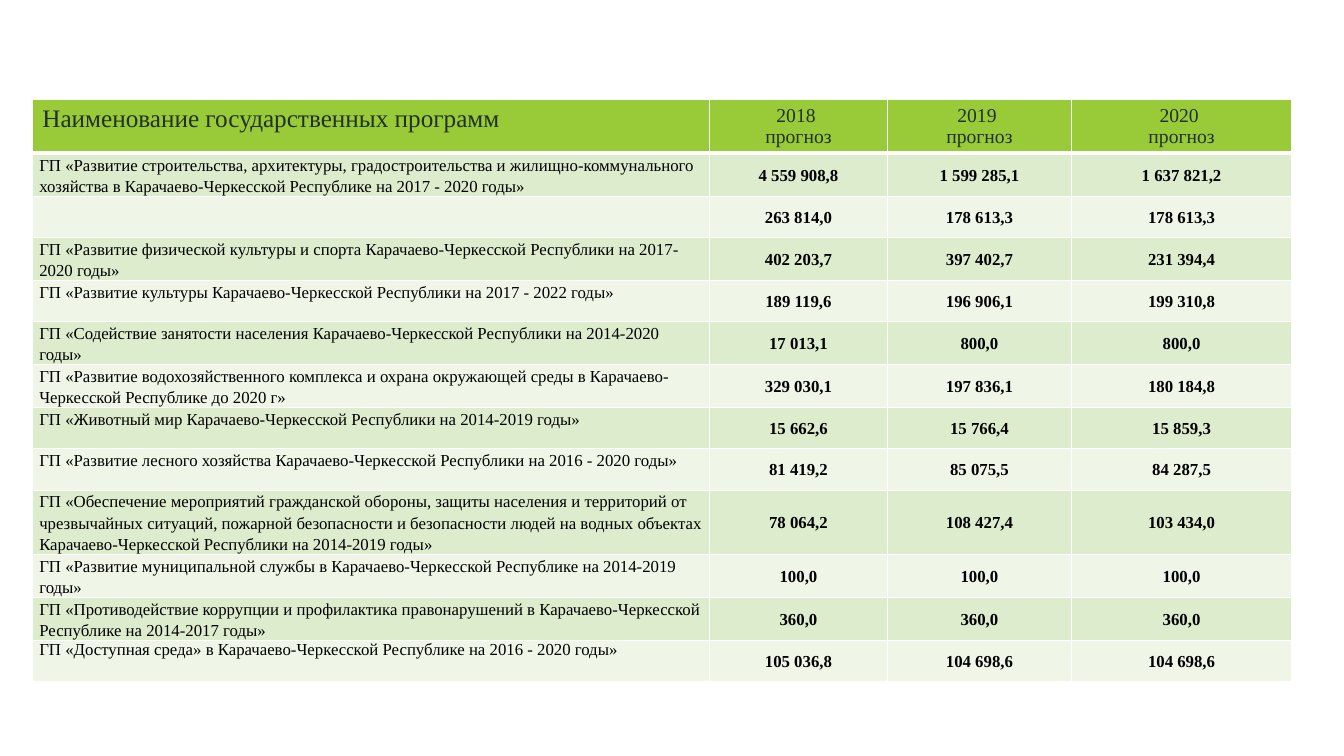
import pptx
import pptx.util
import pptx.dml.color
import pptx.enum.text
import pptx.oxml.ns
import lxml.etree

Inches, Pt = pptx.util.Inches, pptx.util.Pt
ALIGN = pptx.enum.text.PP_ALIGN
ANCHOR = pptx.enum.text.MSO_ANCHOR

FONT = "Times New Roman"
COLORS = {
    "header": "99CB38",
    "header_text": "223028",
    "odd_row": "DEECCE",
    "even_row": "EFF6E8",
    "text": "000000",
    "border": "FFFFFF",
}
PROGRAM_HEADING = "Наименование государственных программ"
YEARS = ["2018 ", "2019 ", "2020 "]
FORECAST = "прогноз"
PROGRAMS = [
    ("ГП «Развитие строительства, архитектуры, градостроительства и жилищно-коммунального хозяйства в Карачаево-Черкесской Республике на 2017 - 2020 годы»",
     "4 559 908,8", "1 599 285,1", "1 637 821,2"),
    ("", "263 814,0", "178 613,3", "178 613,3"),
    ("ГП «Развитие физической культуры и спорта Карачаево-Черкесской Республики на 2017-2020 годы»",
     "402 203,7", "397 402,7", "231 394,4"),
    ("ГП «Развитие культуры Карачаево-Черкесской Республики на 2017 - 2022 годы»",
     "189 119,6", "196 906,1", "199 310,8"),
    ("ГП «Содействие занятости населения Карачаево-Черкесской Республики на 2014-2020 годы»",
     "17 013,1", "800,0", "800,0"),
    ("ГП «Развитие водохозяйственного комплекса и охрана окружающей среды в Карачаево-Черкесской Республике до 2020 г»",
     "329 030,1", "197 836,1", "180 184,8"),
    ("ГП «Животный мир Карачаево-Черкесской Республики на 2014-2019 годы»",
     "15 662,6", "15 766,4", "15 859,3"),
    ("ГП «Развитие лесного хозяйства Карачаево-Черкесской Республики на 2016 - 2020 годы»",
     "81 419,2", "85 075,5", "84 287,5"),
    ("ГП «Обеспечение мероприятий гражданской обороны, защиты населения и территорий от чрезвычайных ситуаций, пожарной безопасности и безопасности людей на водных объектах Карачаево-Черкесской Республики на 2014-2019 годы»",
     "78 064,2", "108 427,4", "103 434,0"),
    ("ГП «Развитие муниципальной службы в Карачаево-Черкесской Республике на 2014-2019 годы»",
     "100,0", "100,0", "100,0"),
    ("ГП «Противодействие коррупции и профилактика правонарушений в Карачаево-Черкесской Республике на 2014-2017 годы»",
     "360,0", "360,0", "360,0"),
    ("ГП «Доступная среда» в Карачаево-Черкесской Республике на 2016 - 2020 годы»",
     "105 036,8", "104 698,6", "104 698,6"),
]
COLUMN_WIDTHS = [6.72, 1.76, 1.83, 2.18]
ROW_HEIGHT = 0.41
LEFT, TOP = 0.32, 0.99


def color(key):
    return pptx.dml.color.RGBColor.from_string(COLORS[key])


def paint_cell(cell, fill, bottom_width=1):
    properties = cell._tc.get_or_add_tcPr()
    qn = pptx.oxml.ns.qn
    for side, width in (("L", 1), ("R", 1), ("T", 1), ("B", bottom_width)):
        border = lxml.etree.SubElement(properties, qn(f"a:ln{side}"), w=str(Pt(width)))
        solid = lxml.etree.SubElement(border, qn("a:solidFill"))
        lxml.etree.SubElement(solid, qn("a:srgbClr"), val=COLORS["border"])
    cell.fill.solid()
    cell.fill.fore_color.rgb = color(fill)


def write(paragraph, text, size, ink, bold=False, align=ALIGN.LEFT):
    paragraph.alignment = align
    run = paragraph.add_run()
    run.text = text
    run.font.name = FONT
    run.font.size = Pt(size)
    run.font.bold = bold
    run.font.color.rgb = color(ink)


def fill_header(budget):
    for column in range(len(COLUMN_WIDTHS)):
        paint_cell(budget.cell(0, column), "header", bottom_width=3)
    write(budget.cell(0, 0).text_frame.paragraphs[0], PROGRAM_HEADING, 18, "header_text")
    for column, year in enumerate(YEARS, 1):
        frame = budget.cell(0, column).text_frame
        write(frame.paragraphs[0], year, 14, "header_text", align=ALIGN.CENTER)
        write(frame.add_paragraph(), FORECAST, 14, "header_text", align=ALIGN.CENTER)


def fill_program(budget, row, program):
    for column, text in enumerate(program):
        cell = budget.cell(row, column)
        paint_cell(cell, "odd_row" if row % 2 else "even_row")
        if not text:
            continue
        cell.margin_left = cell.margin_right = Inches(0.07)
        cell.margin_top = cell.margin_bottom = 0
        paragraph = cell.text_frame.paragraphs[0]
        if column:
            cell.vertical_anchor = ANCHOR.MIDDLE
            paragraph.line_spacing = 1.07
            paragraph.space_after = Pt(8)
            write(paragraph, text, 12, "text", bold=True, align=ALIGN.CENTER)
        else:
            paragraph.line_spacing = 1.15 if row < len(PROGRAMS) else 1.0
            write(paragraph, text, 12, "text")


def main():
    deck = pptx.Presentation()
    deck.slide_width, deck.slide_height = Inches(13.33), Inches(7.5)
    slide = deck.slides.add_slide(deck.slide_layouts[6])
    row_count = len(PROGRAMS) + 1
    budget = slide.shapes.add_table(
        row_count, len(COLUMN_WIDTHS), Inches(LEFT), Inches(TOP),
        Inches(sum(COLUMN_WIDTHS)), Inches(ROW_HEIGHT * row_count)).table
    for column, width in zip(budget.columns, COLUMN_WIDTHS):
        column.width = Inches(width)
    for row in budget.rows:
        row.height = Inches(ROW_HEIGHT)
    fill_header(budget)
    for row, program in enumerate(PROGRAMS, 1):
        fill_program(budget, row, program)
    deck.save("out.pptx")


if __name__ == "__main__":
    main()
